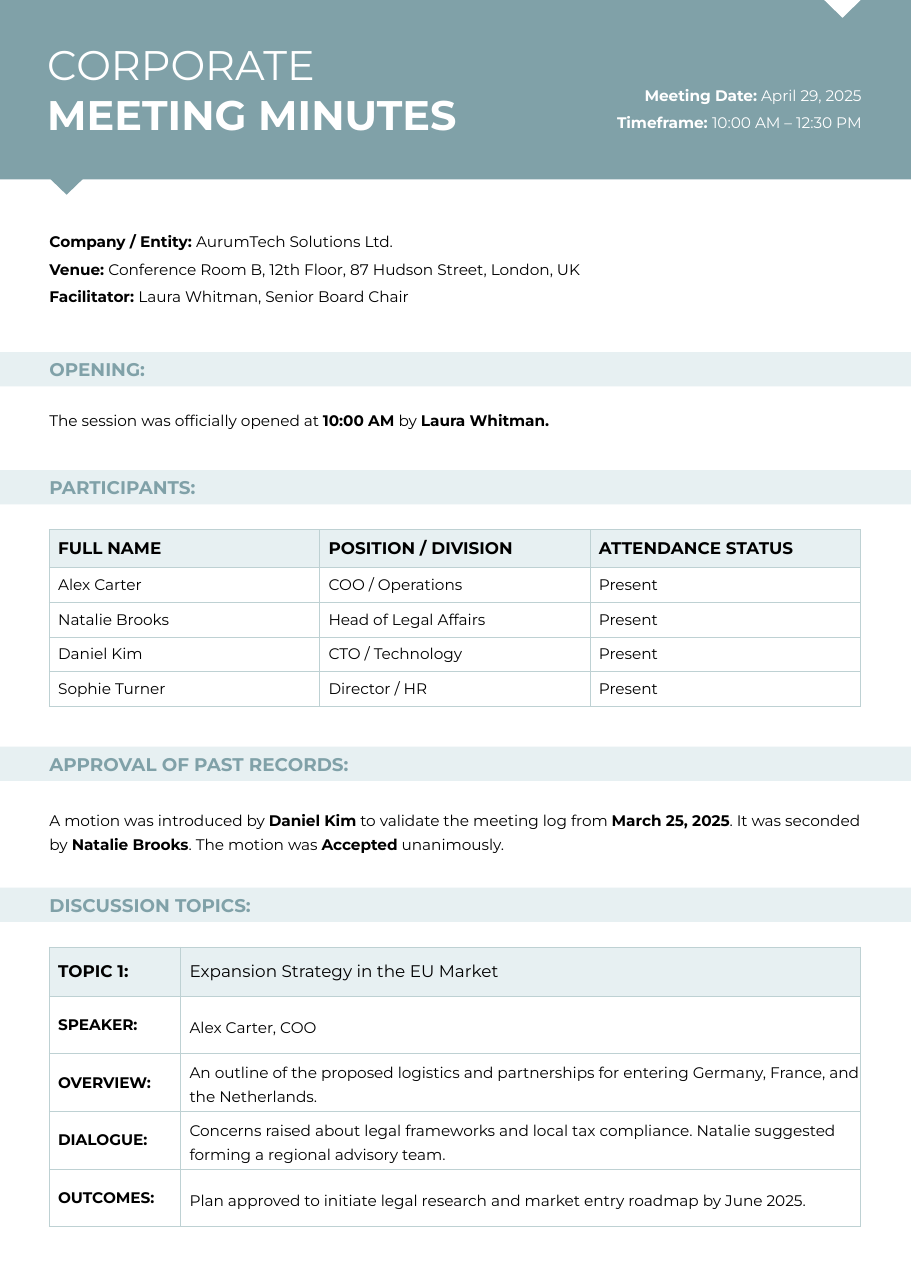
import pptx
import pptx.util
import pptx.dml.color
import pptx.enum.shapes
import pptx.enum.text
import pptx.oxml
import pptx.oxml.ns

Cm = pptx.util.Cm
Pt = pptx.util.Pt
Shape = pptx.enum.shapes.MSO_SHAPE
Align = pptx.enum.text.PP_ALIGN
Middle = pptx.enum.text.MSO_ANCHOR.MIDDLE

COLORS = {"teal": "80A1A8", "pale": "E7F0F2", "edge": "BED1D3",
          "white": "FFFFFF", "black": "000000"}
FACE = "Montserrat"
WIDE, TALL = 21.0, 29.7
LEFT, SPAN = 1.14, 18.7
BAND, DROP = 0.79, 1.37

INFO = ["**Company / Entity: **AurumTech Solutions Ltd.",
        "**Venue: **Conference Room B, 12th Floor, 87 Hudson Street, London, UK",
        "**Facilitator: **Laura Whitman, Senior Board Chair"]
OPENING = "The session was officially opened at **10:00 AM** by **Laura Whitman.**"
RECORDS = ("A motion was introduced by **Daniel Kim** to validate the meeting log from "
           "**March 25, 2025**. It was seconded by **Natalie Brooks**. "
           "The motion was **Accepted** unanimously.")
PEOPLE = [["**FULL NAME**", "**POSITION / DIVISION**", "**ATTENDANCE STATUS**"],
          ["Alex Carter", "COO / Operations", "Present"],
          ["Natalie Brooks", "Head of Legal Affairs", "Present"],
          ["Daniel Kim", "CTO / Technology", "Present"],
          ["Sophie Turner", "Director / HR", "Present"]]
TOPIC = [["**TOPIC 1:**", "Expansion Strategy in the EU Market"],
         ["**SPEAKER:**", "Alex Carter, COO"],
         ["**OVERVIEW:**", "An outline of the proposed logistics and partnerships "
          "for entering Germany, France, and the Netherlands."],
         ["**DIALOGUE:**", "Concerns raised about legal frameworks and local tax "
          "compliance. Natalie suggested forming a regional advisory team."],
         ["**OUTCOMES:**", "Plan approved to initiate legal research and market "
          "entry roadmap by June 2025."]]


def tint(name):
    return pptx.dml.color.RGBColor.from_string(COLORS[name])


def assign(target, values):
    for key, value in values.items():
        setattr(target, key, value)


def inset(left=0):
    return {"margin_left": Cm(left), "margin_top": 0,
            "margin_right": 0, "margin_bottom": 0}


def write(frame, lines, size=10, color="black", **layout):
    for at, line in enumerate(lines):
        para = frame.add_paragraph() if at else frame.paragraphs[0]
        assign(para, layout)
        for turn, words in enumerate(line.split("**")):
            if words:
                run = para.add_run()
                run.text = words
                assign(run.font, {"size": Pt(size), "name": FACE, "bold": turn % 2 == 1})
                run.font.color.rgb = tint(color)


def label(slide, x, y, w, h, lines, **style):
    frame = slide.shapes.add_textbox(Cm(x), Cm(y), Cm(w), Cm(h)).text_frame
    assign(frame, {"word_wrap": True, **inset()})
    write(frame, lines, **style)


def block(slide, kind, x, y, w, h, color, turn=0):
    shape = slide.shapes.add_shape(kind, Cm(x), Cm(y), Cm(w), Cm(h))
    shape.fill.solid()
    shape.fill.fore_color.rgb = tint(color)
    shape.line.fill.background()
    shape.shadow.inherit = False
    shape.rotation = turn
    return shape


def header(slide, x, y, w, h):
    block(slide, Shape.RECTANGLE, x, y, w, h, "teal")
    block(slide, Shape.ISOSCELES_TRIANGLE, x + 1.09, y + h - 0.08, 0.89, 0.43, "teal", 180)
    block(slide, Shape.ISOSCELES_TRIANGLE, x + w - 2, y, 0.84, 0.41, "white", 180)
    label(slide, x + 1.09, y + 0.91, 12.24, 2.31,
          ["CORPORATE", "**MEETING MINUTES**"], size=27, color="white")
    times = ["**Meeting Date:** April 29, 2025", "**Timeframe: **10:00 AM – 12:30 PM"]
    for at, line in enumerate(times):
        label(slide, x + w - 7.21, y + 1.98 + at * 0.64, 6.07, 0.43, [line],
              color="white", alignment=Align.RIGHT)


def details(slide, x, y, w, h):
    for at, line in enumerate(INFO):
        label(slide, x, y + at * h, w, 0.43, [line])


def section(slide, y, title):
    band = block(slide, Shape.RECTANGLE, 0, y, WIDE, BAND, "pale")
    frame = band.text_frame
    assign(frame, {"word_wrap": True, "vertical_anchor": Middle, **inset(LEFT)})
    write(frame, [f"**{title}**"], size=12, color="teal", alignment=Align.LEFT)
    return y + DROP


def border(cell):
    props = cell._tc.get_or_add_tcPr()
    for side in ("lnL", "lnR", "lnT", "lnB"):
        props.append(pptx.oxml.parse_xml(
            f'<a:{side} {pptx.oxml.ns.nsdecls("a")} w="9525"><a:solidFill>'
            f'<a:srgbClr val="{COLORS["edge"]}"/></a:solidFill></a:{side}>'))


def grid(slide, x, y, rows, widths, first, rest, space=None):
    heights = [first] + [rest] * (len(rows) - 1)
    table = slide.shapes.add_table(len(rows), len(widths), Cm(x), Cm(y),
                                   Cm(sum(widths)), Cm(sum(heights))).table
    assign(table, {"first_row": False, "horz_banding": False})
    for col, width in zip(table.columns, widths):
        col.width = Cm(width)
    for r, line in enumerate(rows):
        table.rows[r].height = Cm(heights[r])
        for c, words in enumerate(line):
            cell = table.cell(r, c)
            border(cell)
            assign(cell, {"vertical_anchor": Middle, **inset(0.2)})
            if r:
                cell.fill.background()
            else:
                cell.fill.solid()
                cell.fill.fore_color.rgb = tint("pale")
            write(cell.text_frame, [words], size=10 if r else 11,
                  line_spacing=space if r and c else None)


def main():
    deck = pptx.Presentation()
    assign(deck, {"slide_width": Cm(WIDE), "slide_height": Cm(TALL)})
    slide = deck.slides.add_slide(deck.slide_layouts[6])
    header(slide, 0, 0, WIDE, 4.14)
    details(slide, LEFT, 5.36, SPAN, 0.63)
    y = section(slide, 8.12, "OPENING:")
    label(slide, LEFT, y, SPAN, 0.43, [OPENING])
    y = section(slide, 10.84, "PARTICIPANTS:")
    grid(slide, LEFT, y, PEOPLE, [SPAN / 3] * 3, 0.88, 0.8)
    y = section(slide, 17.22, "APPROVAL OF PAST RECORDS:")
    label(slide, LEFT, y, SPAN, 1, [RECORDS], line_spacing=1.3)
    y = section(slide, 20.47, "DISCUSSION TOPICS:")
    grid(slide, LEFT, y, TOPIC, [3.03, SPAN - 3.03], 1.13, 1.33, space=1.3)
    deck.save("out.pptx")


if __name__ == "__main__":
    main()
